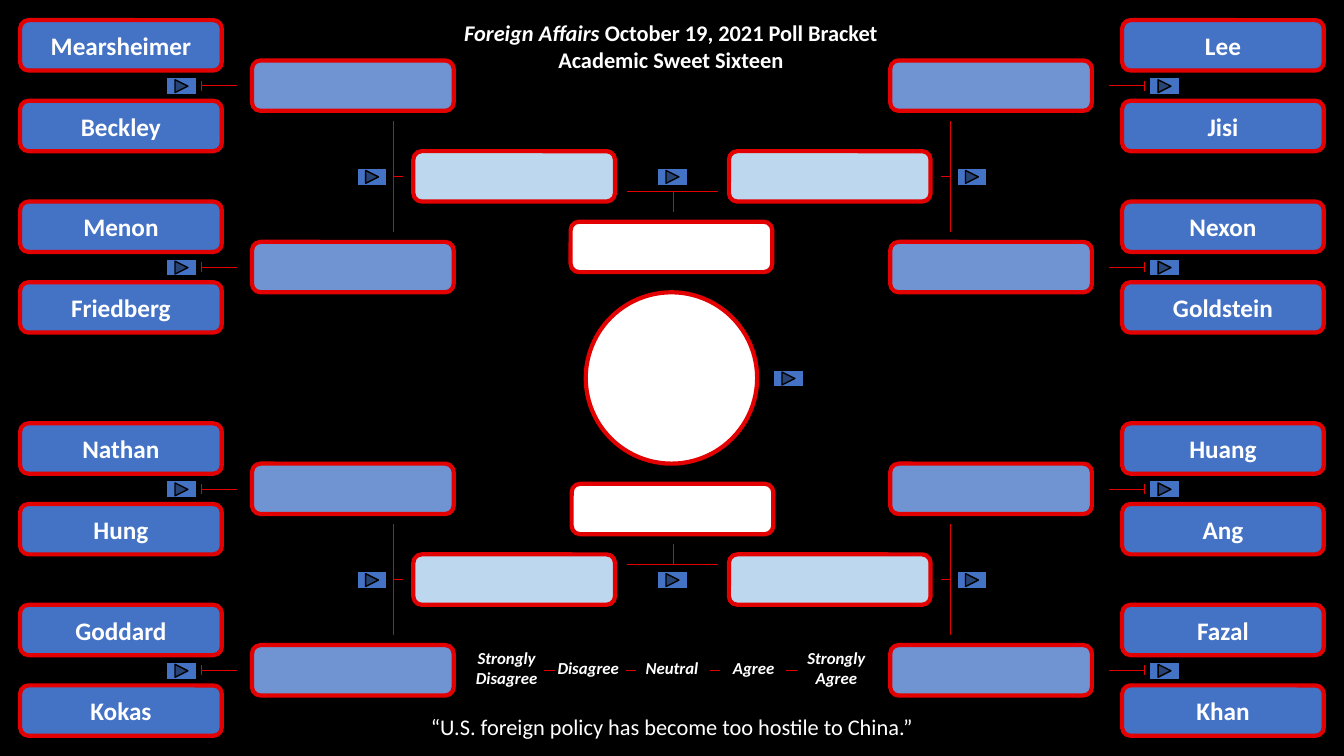
from dataclasses import dataclass

from lxml import etree
from pptx import Presentation
from pptx import util as u
from pptx.dml.color import RGBColor
from pptx.enum import shapes, text
from pptx.oxml.ns import qn

TITLE = [
    [("Foreign Affairs ", True), ("October 19, 2021 Poll Bracket", False)],
    [("Academic Sweet Sixteen", False)],
]
STATEMENT = "“U.S. foreign policy has become too hostile to China.”"
# label, left, top, width, height
SCALE_LABELS = [
    ("Strongly Disagree", 460, 638, 85, 50),
    ("Disagree", 541, 648, 85, 30),
    ("Neutral", 626, 648, 81, 30),
    ("Agree", 707, 648, 81, 30),
    ("Strongly Agree", 789, 638, 81, 50),
]
SCALE_DASHES = [540, 621, 704, 780]
# Horizontal places of each half of the bracket
SIDES = [
    dict(
        pairs=[("Mearsheimer", "Beckley"), ("Menon", "Friedberg"),
               ("Nathan", "Hung"), ("Goddard", "Kokas")],
        player=20, quarter=250, semi=410,
        tick=200, stem=(200, 235), bar=390, branch=(390, 400),
        pair_button=165, half_button=354,
    ),
    dict(
        pairs=[("Lee", "Jisi"), ("Nexon", "Goldstein"),
               ("Huang", "Ang"), ("Fazal", "Khan")],
        player=1113, quarter=883, semi=723,
        tick=1135, stem=(1100, 1135), bar=943, branch=(933, 943),
        pair_button=1140, half_button=949,
    ),
]
PAIR_TOPS = [20, 200, 420, 600]
HALF_TOPS = [20, 420]
# final box left and top, stem top and bottom, bar height
FINALS = [(566, 220, 190, 210, 190), (567, 480, 540, 560, 560)]

PX = 9144  # EMU; 100 px to the inch
BOX_WIDTH, BOX_HEIGHT = 200, 50
BUTTON_WIDTH, BUTTON_HEIGHT = 30, 17


@dataclass(frozen=True)
class Theme:
    background: str = "000000"
    player: str = "4472C4"
    quarter: str = "7093D2"
    semi: str = "BDD7EE"
    final: str = "FFFFFF"
    outline: str = "E20000"
    button_outline: str = "000000"
    text: str = "FFFFFF"
    font: str = "Calibri"
    player_size: int = 18
    heading_size: int = 16
    scale_size: int = 12


THEME = Theme()


def color(value):
    return RGBColor.from_string(value)


def px(*lengths):
    return [u.Emu(length * PX) for length in lengths]


def add_run(paragraph, words, size, bold=False, italic=False):
    paragraph.alignment = text.PP_ALIGN.CENTER
    run = paragraph.add_run()
    run.text = words
    run.font.name = THEME.font
    run.font.size = u.Pt(size)
    run.font.bold = bold
    run.font.italic = italic
    run.font.color.rgb = color(THEME.text)


def add_figure(slide, kind, place, fill, outline=THEME.outline, weight=3):
    shape = slide.shapes.add_shape(kind, *px(*place))
    shape.shadow.inherit = False
    shape.fill.solid()
    shape.fill.fore_color.rgb = color(fill)
    shape.line.color.rgb = color(outline)
    shape.line.width = u.Pt(weight)
    return shape


def add_box(slide, left, top, fill, name=None):
    shape = add_figure(slide, shapes.MSO_SHAPE.ROUNDED_RECTANGLE,
                       (left, top, BOX_WIDTH, BOX_HEIGHT), fill)
    if name:
        shape.text_frame.vertical_anchor = text.MSO_ANCHOR.MIDDLE
        add_run(shape.text_frame.paragraphs[0], name, THEME.player_size, bold=True)


def add_button(slide, left, middle):
    """Add a forward button just around the height of its connecting line."""
    add_figure(slide, shapes.MSO_SHAPE.ACTION_BUTTON_FORWARD_OR_NEXT,
               (left, middle - 8, BUTTON_WIDTH, BUTTON_HEIGHT),
               THEME.player, THEME.button_outline, 1)


def add_line(slide, x1, y1, x2, y2):
    line = slide.shapes.add_connector(
        shapes.MSO_CONNECTOR.STRAIGHT, *px(x1, y1, x2, y2))
    line.line.color.rgb = color(THEME.outline)
    line.line.width = u.Pt(0.5)
    properties = line._element.find(qn("p:spPr"))
    etree.SubElement(properties, qn("a:effectLst"))


def add_text(slide, place, paragraphs, size, bold=False):
    """Add centred paragraphs, each a list of (words, italic) runs."""
    frame = slide.shapes.add_textbox(*px(*place)).text_frame
    frame.word_wrap = True
    frame.auto_size = text.MSO_AUTO_SIZE.SHAPE_TO_FIT_TEXT
    for index, runs in enumerate(paragraphs):
        paragraph = frame.add_paragraph() if index else frame.paragraphs[0]
        for words, italic in runs:
            add_run(paragraph, words, size, bold, italic)


def add_side(slide, side):
    for top, (upper, lower) in zip(PAIR_TOPS, side["pairs"]):
        middle = top + 65
        add_box(slide, side["player"], top, THEME.player, upper)
        add_box(slide, side["player"], top + 80, THEME.player, lower)
        add_box(slide, side["quarter"], top + 40, THEME.quarter)
        add_line(slide, side["tick"], middle - 5, side["tick"], middle + 5)
        start, end = side["stem"]
        add_line(slide, start, middle, end, middle)
        add_button(slide, side["pair_button"], middle)
    for top in HALF_TOPS:
        middle = top + 155
        add_box(slide, side["semi"], top + 130, THEME.semi)
        add_line(slide, side["bar"], top + 100, side["bar"], top + 210)
        start, end = side["branch"]
        add_line(slide, start, middle, end, middle)
        add_button(slide, side["half_button"], middle)


def add_center(slide):
    for half_top, (left, top, stem_top, stem_bottom, bar) in zip(HALF_TOPS, FINALS):
        add_box(slide, left, top, THEME.final)
        add_line(slide, 668, stem_top, 668, stem_bottom)
        add_line(slide, 622, bar, 712, bar)
        add_button(slide, 652, half_top + 155)
    add_figure(slide, shapes.MSO_SHAPE.OVAL, (581, 290, 170, 170), THEME.final)
    add_button(slide, 767, 375)


def add_captions(slide):
    add_text(slide, (249, 14, 833, 64), TITLE, THEME.heading_size, bold=True)
    add_text(slide, (220, 703, 893, 37), [[(STATEMENT, False)]], THEME.heading_size)
    for label, *place in SCALE_LABELS:
        add_text(slide, place, [[(label, True)]], THEME.scale_size, bold=True)
    for left in SCALE_DASHES:
        add_line(slide, left, 665, left + 10, 665)


def main():
    presentation = Presentation()
    presentation.slide_width, presentation.slide_height = px(1333, 750)
    slide = presentation.slides.add_slide(presentation.slide_layouts[6])
    slide.background.fill.solid()
    slide.background.fill.fore_color.rgb = color(THEME.background)
    for side in SIDES:
        add_side(slide, side)
    add_center(slide)
    add_captions(slide)
    presentation.save("out.pptx")


if __name__ == "__main__":
    main()
